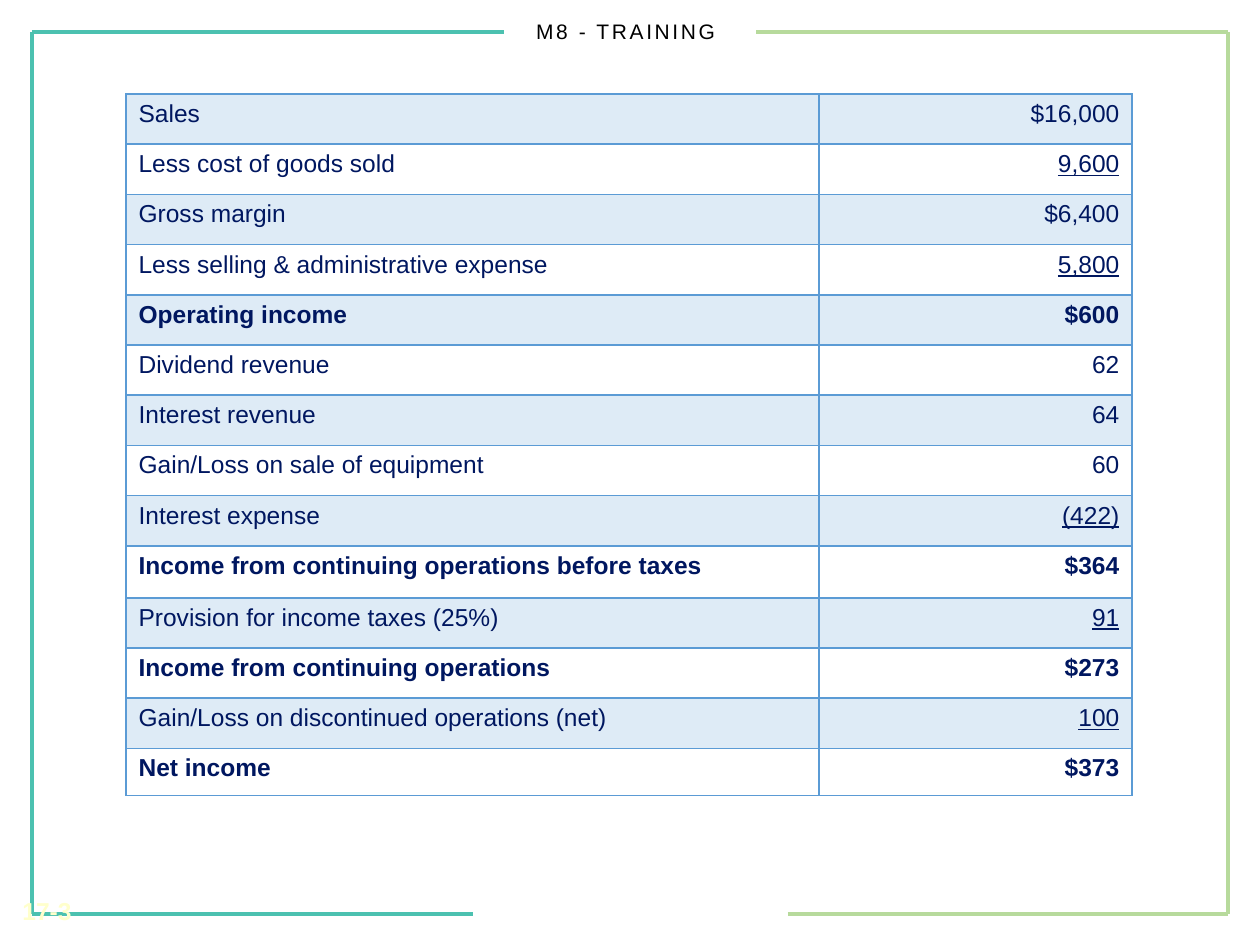
import pptx
import pptx.util
import pptx.dml.color
import pptx.enum.text
import pptx.enum.shapes
import pptx.oxml
import pptx.oxml.ns

PX = 914400 / 126
COLORS = {"teal": "4CC1B0", "green": "B7DA9C", "blue": "5B9BD5",
          "navy": "001760", "black": "000000", "cream": "FFFFCC"}
TITLE = "M8 - TRAINING "
NUMBER = "17-3"
ROWS = [
    ("Sales", "$16,000", ""),
    ("Less cost of goods sold", "9,600", "underline"),
    ("Gross margin", "$6,400", ""),
    ("Less selling & administrative expense", "5,800", "underline"),
    ("Operating income", "$600", "bold"),
    ("Dividend revenue", "62", ""),
    ("Interest revenue", "64", ""),
    ("Gain/Loss on sale of equipment", "60", ""),
    ("Interest expense", "(422)", "underline"),
    ("Income from continuing operations before taxes", "$364", "bold"),
    ("Provision for income taxes (25%)", "91", "underline"),
    ("Income from continuing operations", "$273", "bold"),
    ("Gain/Loss on discontinued operations (net)", "100", "underline"),
    ("Net income", "$373", "bold"),
]
COLUMNS = (693, 313)
TABLE_LEFT, TABLE_TOP, TABLE_HEIGHT = 126, 94, 702
SPECIAL_HEIGHTS = {9: 52, 13: 47}
LEFT, TOP, RIGHT, BOTTOM = 32, 32, 1228, 914
FRAME = [
    (LEFT, TOP, LEFT, BOTTOM, "teal"),
    (RIGHT, TOP, RIGHT, BOTTOM, "green"),
    (LEFT, BOTTOM, 473, BOTTOM, "teal"),
    (788, BOTTOM, RIGHT, BOTTOM, "green"),
    (LEFT, TOP, 504, TOP, "teal"),
    (756, TOP, RIGHT, TOP, "green"),
]
ALIGN = pptx.enum.text.PP_ALIGN
ANCHOR = pptx.enum.text.MSO_ANCHOR
NS = pptx.oxml.ns.nsdecls("a")


def emu(px):
    return pptx.util.Emu(round(px * PX))


def rgb(name):
    return pptx.dml.color.RGBColor.from_string(COLORS[name])


def write(tf, text, size, color, align, bold=False, underline=False):
    tf.text = text
    p = tf.paragraphs[0]
    p.alignment = align
    r = p.runs[0]
    r.font.name = "Arial"
    r.font.size = pptx.util.Pt(size)
    r.font.color.rgb = rgb(color)
    r.font.bold = bold
    r.font.underline = underline
    return r


def add_text(s, box, anchor, *style, **marks):
    tf = s.shapes.add_textbox(*map(emu, box)).text_frame
    tf.word_wrap = True
    tf.vertical_anchor = anchor
    return write(tf, *style, **marks)


def add_frame(s):
    for x1, y1, x2, y2, color in FRAME:
        line = s.shapes.add_connector(
            pptx.enum.shapes.MSO_CONNECTOR.STRAIGHT, *map(emu, (x1, y1, x2, y2)))
        line.line.color.rgb = rgb(color)
        line.line.width = pptx.util.Pt(2.25)
        line._element.spPr.append(pptx.oxml.parse_xml(f"<a:effectLst {NS}/>"))


def style_cell(cell, shaded):
    if shaded:
        cell.fill.solid()
        cell.fill.fore_color.rgb = rgb("blue")
    else:
        cell.fill.background()
    tcPr = cell._tc.get_or_add_tcPr()
    for clr in tcPr.iter(pptx.oxml.ns.qn("a:srgbClr")):
        clr.append(pptx.oxml.parse_xml(f'<a:alpha {NS} val="20000"/>'))
    for i, side in enumerate("LRTB"):
        tcPr.insert(i, pptx.oxml.parse_xml(
            f'<a:ln{side} {NS} w="12700"><a:solidFill>'
            f'<a:srgbClr val="{COLORS["blue"]}"/></a:solidFill></a:ln{side}>'))


def add_income_table(s):
    table = s.shapes.add_table(
        len(ROWS), len(COLUMNS),
        *map(emu, (TABLE_LEFT, TABLE_TOP, sum(COLUMNS), TABLE_HEIGHT))).table
    table.first_row = table.horz_banding = False
    for column, width in zip(table.columns, COLUMNS):
        column.width = emu(width)
    regular = ((TABLE_HEIGHT - sum(SPECIAL_HEIGHTS.values()))
               / (len(ROWS) - len(SPECIAL_HEIGHTS)))
    for i, (label, amount, mark) in enumerate(ROWS):
        table.rows[i].height = emu(SPECIAL_HEIGHTS.get(i, regular))
        for j, (text, align) in enumerate(((label, ALIGN.LEFT), (amount, ALIGN.RIGHT))):
            cell = table.cell(i, j)
            style_cell(cell, i % 2 == 0)
            write(cell.text_frame, text, 14, "navy", align, mark == "bold",
                  j == 1 and mark == "underline")


def main():
    prs = pptx.Presentation()
    prs.slide_width, prs.slide_height = emu(1260), emu(945)
    s = prs.slides.add_slide(prs.slide_layouts[6])
    add_frame(s)
    r = add_text(s, (0, 0, 1260, 63), ANCHOR.MIDDLE, TITLE, 12, "black", ALIGN.CENTER)
    r.font._element.set("spc", "150")
    add_income_table(s)
    add_text(s, (-10, 890, 94, 66), ANCHOR.TOP, NUMBER, 14, "cream", ALIGN.RIGHT, bold=True)
    prs.save("out.pptx")


if __name__ == "__main__":
    main()
